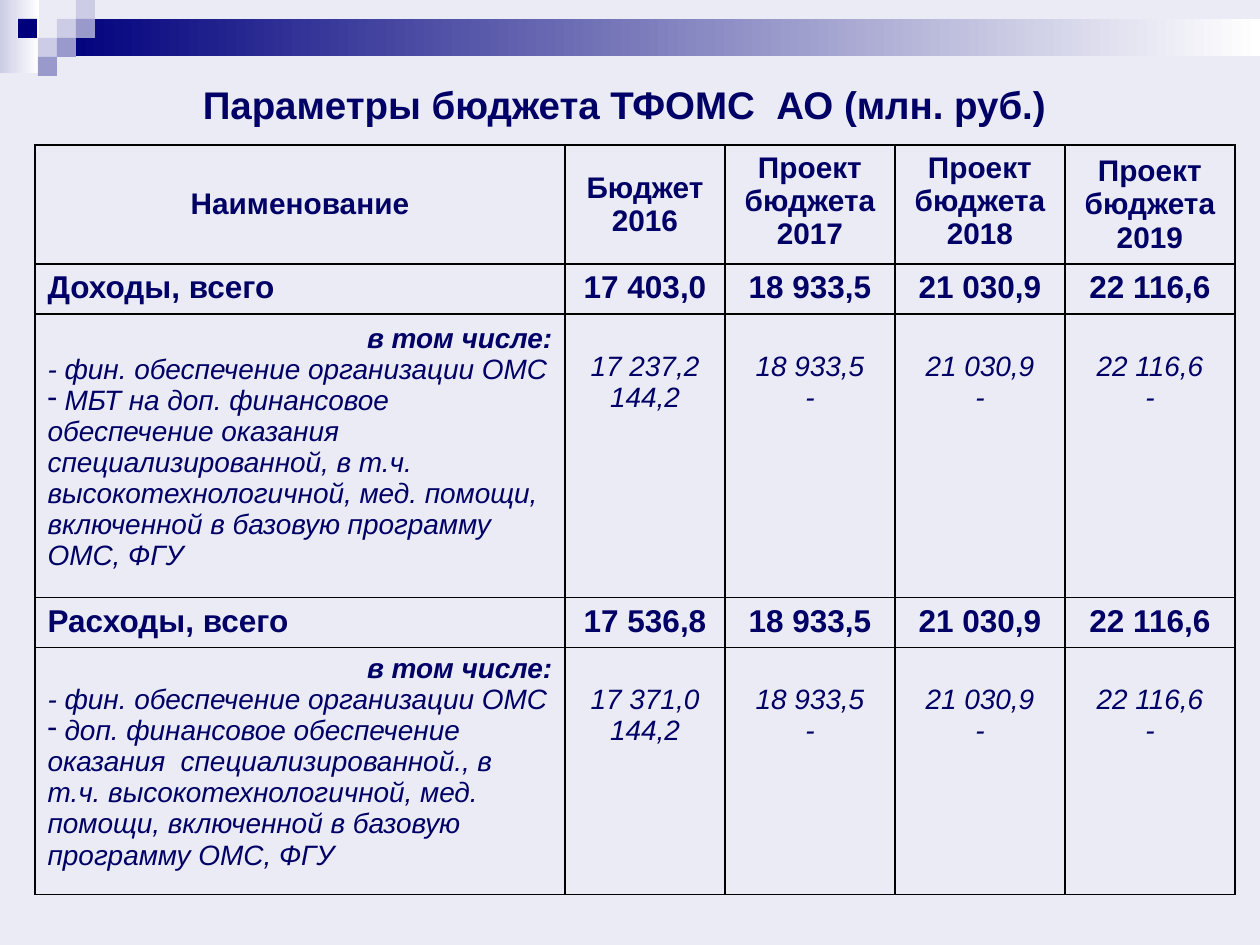
"""Build the slide with the parameters of the health insurance fund budget."""
import typing

import pptx
import pptx.dml.color
import pptx.enum.shapes
import pptx.enum.text
import pptx.oxml
import pptx.oxml.ns
import pptx.util

RGB = pptx.dml.color.RGBColor
ALIGN = pptx.enum.text.PP_ALIGN
ANCHOR = pptx.enum.text.MSO_ANCHOR

PAPER = RGB(0xEB, 0xEB, 0xF5)
INK = RGB(0x00, 0x00, 0x66)
NAVY = RGB(0x00, 0x00, 0x7D)
LILAC = RGB(0xCC, 0xCC, 0xE6)
VIOLET = RGB(0x99, 0x99, 0xCC)
WHITE = RGB(0xFF, 0xFF, 0xFF)
BLACK = RGB(0x00, 0x00, 0x00)

PX_PER_INCH = 126
SQUARE = 19
COLUMN_WIDTHS = (530, 160, 170, 170, 170)
ROW_HEIGHTS = (119, 48, 265, 49, 230)


class Block(typing.NamedTuple):
    left: int
    top: int
    width: int
    height: int
    color: RGB
    fade_to: RGB | None = None


class Section(typing.NamedTuple):
    name: str
    totals: tuple[str, ...]
    extra: str
    insurance: tuple[str, ...]
    top_margin: int


HEADINGS = ("Наименование", "Бюджет 2016", "Проект бюджета 2017",
            "Проект бюджета 2018", "Проект бюджета 2019")
PROJECTS = ("18 933,5", "21 030,9", "22 116,6")
EXTRA_SUMS = ("144,2", "-", "-", "-")
SECTIONS = (
    Section("Доходы, всего", ("17 403,0", *PROJECTS),
            " МБТ на доп. финансовое обеспечение оказания специализированной, в т.ч. "
            "высокотехнологичной, мед. помощи, включенной в базовую программу ОМС, ФГУ",
            ("17 237,2", *PROJECTS), 9),
    Section("Расходы, всего", ("17 536,8", *PROJECTS),
            " доп. финансовое обеспечение оказания  специализированной., в т.ч. "
            "высокотехнологичной, мед. помощи, включенной в базовую программу ОМС, ФГУ",
            ("17 371,0", *PROJECTS), 6),
)
BANDS = (
    Block(0, 0, 39, 73, LILAC, WHITE),
    Block(57, 19, 1203, 37, NAVY, WHITE),
)
SQUARES = tuple(
    Block(left, top, SQUARE, SQUARE, color)
    for left, top, color in (
        (57, 19, LILAC), (76, 0, LILAC), (76, 19, VIOLET), (38, 38, LILAC),
        (18, 19, NAVY), (57, 38, VIOLET), (38, 57, VIOLET))
)


def px(length: int) -> int:
    return round(length * pptx.util.Inches(1) / PX_PER_INCH)


def draw_block(slide, block: Block) -> None:
    shape = slide.shapes.add_shape(
        pptx.enum.shapes.MSO_SHAPE.RECTANGLE, *map(px, block[:4]))
    shape.shadow.inherit = False
    shape.line.fill.background()
    if block.fade_to is None:
        shape.fill.solid()
        shape.fill.fore_color.rgb = block.color
        return
    shape.fill.gradient()
    shape.fill.gradient_angle = 0
    for stop, color in zip(shape.fill.gradient_stops, (block.color, block.fade_to)):
        stop.color.rgb = color


def write(frame, text: str, *, size: int, bold: bool = False, italic: bool = False,
          align: ALIGN = ALIGN.CENTER, dash: bool = False) -> None:
    paragraph = frame.paragraphs[0]
    if paragraph.runs:
        paragraph = frame.add_paragraph()
    paragraph.alignment = align
    if dash:
        properties = paragraph.runs and None or paragraph._p.get_or_add_pPr()
        properties.set("marL", "0")
        properties.set("indent", "0")
        bullet = pptx.oxml.parse_xml(
            f'<a:buChar {pptx.oxml.ns.nsdecls("a")} char="-"/>')
        properties.append(bullet)
    run = paragraph.add_run()
    run.text = text
    run.font.name = "Arial"
    run.font.size = pptx.util.Pt(size)
    run.font.bold = bold
    run.font.italic = italic
    run.font.color.rgb = INK


def style_cell(cell) -> None:
    properties = cell._tc.get_or_add_tcPr()
    for side in ("lnL", "lnR", "lnT", "lnB"):
        properties.append(pptx.oxml.parse_xml(
            f'<a:{side} {pptx.oxml.ns.nsdecls("a")} w="{pptx.util.Pt(1)}">'
            f'<a:solidFill><a:srgbClr val="{BLACK}"/></a:solidFill></a:{side}>'))
    cell.fill.solid()
    cell.fill.fore_color.rgb = PAPER
    cell.margin_top = cell.margin_bottom = px(6)


def fill_section(table, row: int, section: Section) -> None:
    write(table.cell(row, 0).text_frame, section.name, size=18, bold=True,
          align=ALIGN.LEFT)
    details = table.cell(row + 1, 0)
    details.margin_top = px(section.top_margin)
    write(details.text_frame, "в том числе:", size=16, bold=True, italic=True,
          align=ALIGN.RIGHT)
    write(details.text_frame, "- фин. обеспечение организации ОМС", size=16,
          italic=True, align=ALIGN.LEFT)
    write(details.text_frame, section.extra, size=16, italic=True,
          align=ALIGN.LEFT, dash=True)
    sums = zip(section.totals, section.insurance, EXTRA_SUMS)
    for column, (total, insurance, extra) in enumerate(sums, 1):
        write(table.cell(row, column).text_frame, total, size=18, bold=True)
        parts = table.cell(row + 1, column)
        parts.margin_top = px(37)
        for amount in (insurance, extra):
            write(parts.text_frame, amount, size=16, italic=True)


def draw_table(slide) -> None:
    table = slide.shapes.add_table(
        len(ROW_HEIGHTS), len(COLUMN_WIDTHS), px(35), px(145),
        px(sum(COLUMN_WIDTHS)), px(sum(ROW_HEIGHTS))).table
    table.first_row = table.horz_banding = False
    for column, width in zip(table.columns, COLUMN_WIDTHS):
        column.width = px(width)
    for row, height in zip(table.rows, ROW_HEIGHTS):
        row.height = px(height)
    for cell in table.iter_cells():
        style_cell(cell)
    for column, heading in enumerate(HEADINGS):
        cell = table.cell(0, column)
        cell.vertical_anchor = ANCHOR.TOP if column in (2, 3) else ANCHOR.MIDDLE
        write(cell.text_frame, heading, size=17, bold=True)
    for index, section in enumerate(SECTIONS):
        fill_section(table, 1 + 2 * index, section)


def main() -> None:
    deck = pptx.Presentation()
    deck.slide_width = px(1260)
    deck.slide_height = px(945)
    slide = deck.slides.add_slide(deck.slide_layouts[6])
    slide.background.fill.solid()
    slide.background.fill.fore_color.rgb = PAPER
    for block in BANDS + SQUARES:
        draw_block(slide, block)
    title = slide.shapes.add_textbox(px(44), px(79), px(1161), px(50)).text_frame
    title.word_wrap = True
    title.vertical_anchor = ANCHOR.MIDDLE
    write(title, "Параметры бюджета ТФОМС  АО (млн. руб.)", size=22, bold=True)
    draw_table(slide)
    deck.save("out.pptx")


if __name__ == "__main__":
    main()
